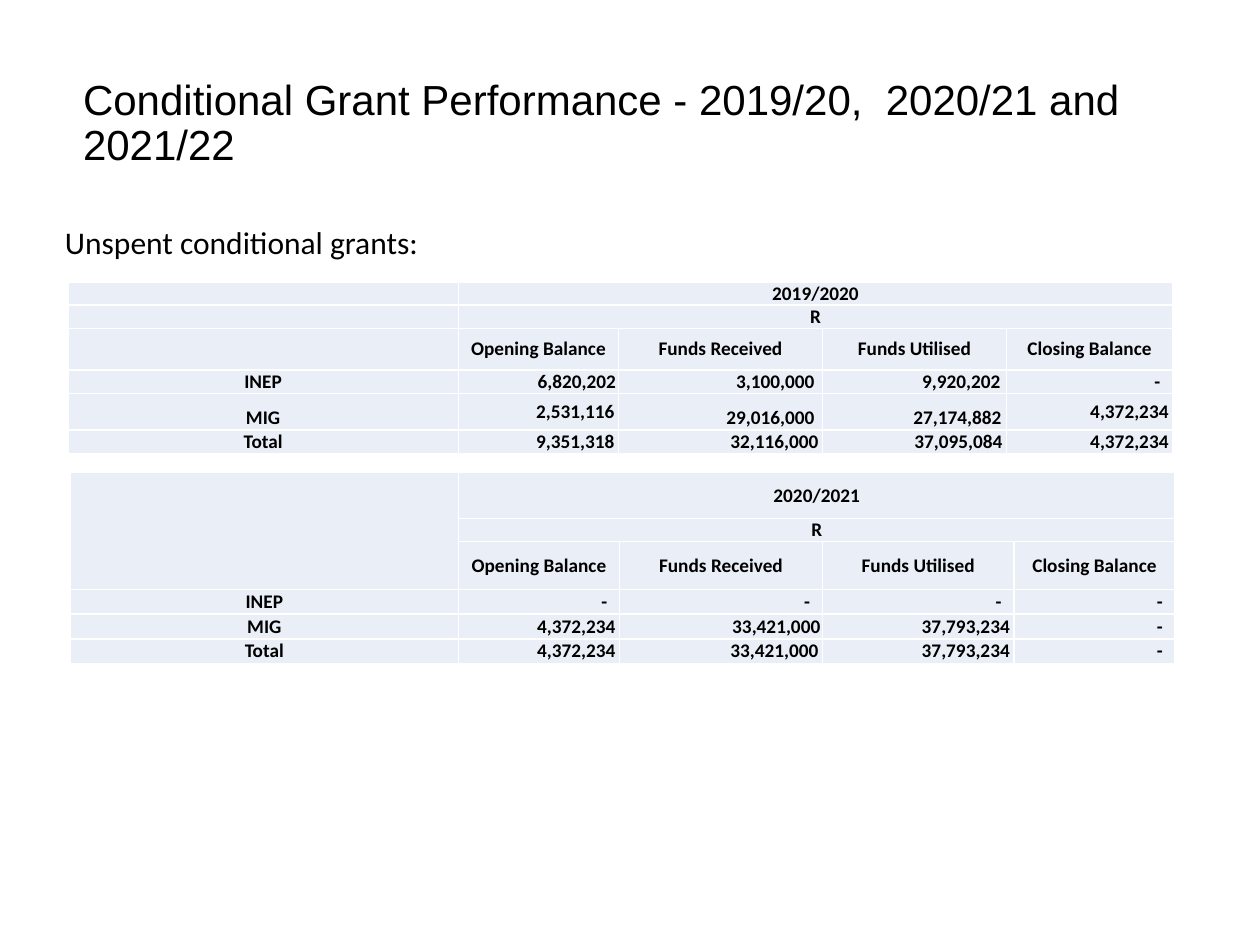
from pptx import Presentation
from pptx.dml.color import RGBColor
from pptx.enum.text import MSO_ANCHOR, PP_ALIGN
from pptx.util import Cm, Pt

BLACK = RGBColor(0, 0, 0)
PALE = RGBColor(0xEA, 0xEF, 0xF7)

TITLE = "Conditional Grant Performance - 2019/20,  2020/21 and 2021/22"
INTRO = "Unspent conditional grants:"
HEADS = ["Opening Balance", "Funds Received", "Funds Utilised", "Closing Balance"]

TABLES = [
    {
        "year": "2019/2020", "at": (1.37, 5.68), "tall": False,
        "cols": [7.87, 3.23, 4.11, 3.71, 3.35],
        "rows": [0.47, 0.47, 0.84, 0.47, 0.74, 0.47],
        "data": [
            ["INEP", "6,820,202", "3,100,000", "9,920,202", "-"],
            ["MIG", "2,531,116", "29,016,000", "27,174,882", "4,372,234"],
            ["Total", "9,351,318", "32,116,000", "37,095,084", "4,372,234"],
        ],
        "low": {(3, 1): 0.05, (3, 2): 0.16, (3, 3): 0.12, (4, 2): 0.16, (4, 3): 0.1},
    },
    {
        "year": "2020/2021", "at": (1.42, 9.53), "tall": True,
        "cols": [7.82, 3.25, 4.09, 3.86, 3.25],
        "rows": [0.92, 0.47, 0.96, 0.5, 0.5, 0.5],
        "data": [
            ["INEP", "-", "-", "-", "-"],
            ["MIG", "4,372,234", "33,421,000", "37,793,234", "-"],
            ["Total", "4,372,234", "33,421,000", "37,793,234", "-"],
        ],
        "low": {(4, 2): 0.04},
    },
]


def write(para, text, font, size, bold=False):
    run = para.add_run()
    run.text = text
    run.font.name = font
    run.font.size = Pt(size)
    run.font.bold = bold
    run.font.color.rgb = BLACK


def style(cell, text, row, col, low):
    cell.fill.solid()
    cell.fill.fore_color.rgb = PALE
    cell.margin_left = cell.margin_right = cell.margin_top = cell.margin_bottom = 0
    cell.vertical_anchor = MSO_ANCHOR.MIDDLE
    para = cell.text_frame.paragraphs[0]
    para.alignment = PP_ALIGN.CENTER
    if not text:
        para._p.get_or_add_endParaRPr().set("sz", "1100")
        return
    if row > 2 and col > 0:
        para.alignment = PP_ALIGN.RIGHT
        pad = 0.25 if text == "-" else 0.08
        cell.margin_right = Cm(low.get((row, col), pad))
    if (row, col) in low or (col == 0 and row in (3, 4)):
        cell.vertical_anchor = MSO_ANCHOR.BOTTOM
    write(para, text, "Calibri", 11, True)


def add_grants(slide, part):
    cols, rows = part["cols"], part["rows"]
    left, top = part["at"]
    table = slide.shapes.add_table(
        len(rows), len(cols), Cm(left), Cm(top), Cm(sum(cols)), Cm(sum(rows))
    ).table
    table.first_row = table.horz_banding = False
    for col, width in zip(table.columns, cols):
        col.width = Cm(width)
    for row, height in zip(table.rows, rows):
        row.height = Cm(height)
    for r in (0, 1):
        table.cell(r, 1).merge(table.cell(r, 4))
    if part["tall"]:
        table.cell(0, 0).merge(table.cell(2, 0))
    grid = [["", part["year"], "", "", ""], ["", "R", "", "", ""], [""] + HEADS]
    for r, line in enumerate(grid + part["data"]):
        for c, text in enumerate(line):
            style(table.cell(r, c), text, r, c, part["low"])


def main():
    deck = Presentation()
    deck.slide_width, deck.slide_height = Cm(25.4), Cm(19.05)
    slide = deck.slides.add_slide(deck.slide_layouts[5])

    title = slide.shapes.title
    title.left, title.top, title.width, title.height = Cm(1.42), Cm(1.02), Cm(22.25), Cm(2.97)
    title.text_frame.vertical_anchor = MSO_ANCHOR.MIDDLE
    para = title.text_frame.paragraphs[0]
    para.alignment = PP_ALIGN.LEFT
    para.line_spacing = 0.9
    write(para, TITLE, "Arial", 24)

    intro = slide.shapes.add_textbox(Cm(0.91), Cm(4.37), Cm(23.83), Cm(2.24)).text_frame
    intro.word_wrap = True
    intro.margin_left = Cm(0.4)
    para = intro.paragraphs[0]
    para.space_after = Pt(6)
    write(para, INTRO, "Calibri", 18)

    for part in TABLES:
        add_grants(slide, part)
    deck.save("out.pptx")


if __name__ == "__main__":
    main()
